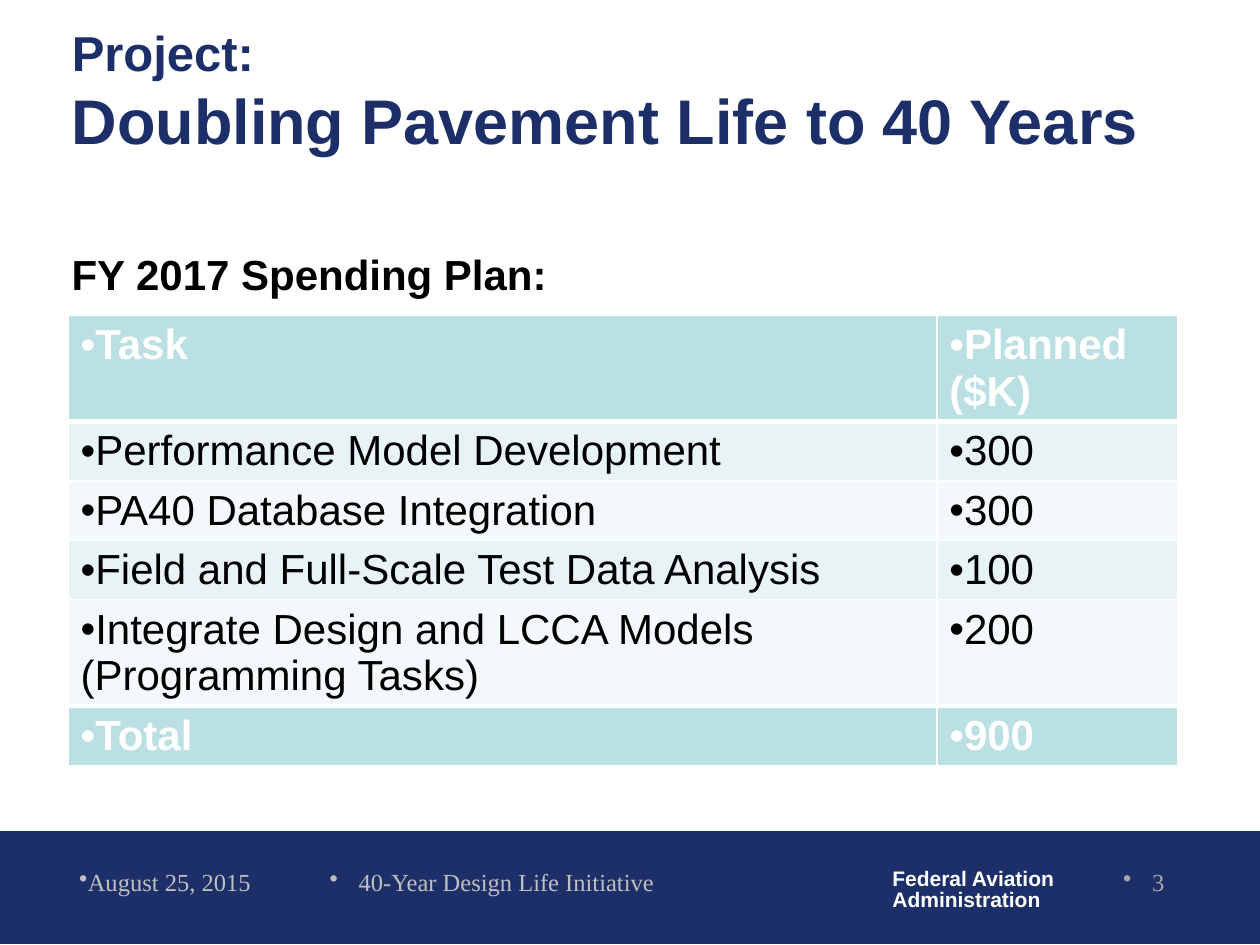
"""Build the FY 2017 spending plan slide of the pavement life project."""
from dataclasses import dataclass
from typing import Optional

from lxml.etree import SubElement
from pptx import Presentation
from pptx.dml.color import RGBColor
from pptx.enum.shapes import MSO_SHAPE as SHAPE
from pptx.enum.text import MSO_ANCHOR as ANCHOR, MSO_AUTO_SIZE as AUTO, PP_ALIGN as ALIGN
from pptx.oxml.ns import qn
from pptx.util import Inches, Pt

COLORS = {
    "navy": "1D2F68", "white": "FFFFFF", "black": "000000", "teal": "BBE0E3",
    "band": "E7F3F4", "pale": "F3F9FA", "silver": "BFBFBF", "gray": "A6A6A6",
}
UNIT = Inches(10) // 100
SANS, SERIF = "Arial", "Times New Roman"


@dataclass
class Box:
    """Place on a grid of 100 columns by 75 rows."""
    col: float
    row: float
    cols: float
    rows: float

    def emu(self) -> tuple:
        return tuple(round(n * UNIT) for n in (self.col, self.row, self.cols, self.rows))


@dataclass
class Style:
    """Character format."""
    size: int
    color: str
    bold: bool = False
    name: str = SANS


@dataclass
class Label:
    """Text box with one paragraph per line; hang is the bullet's indent in columns."""
    box: Box
    lines: list
    style: Style
    align: ALIGN = ALIGN.LEFT
    hang: Optional[float] = None
    wrap: bool = True
    spacing: float = 1.0


HEAD = Style(24, "white", True)
BODY = Style(24, "black")
FOOT = Style(14, "silver", name=SERIF)
TITLE = [("Project: ", Style(28, "navy", True)),
         ("Doubling Pavement Life to 40 Years", Style(36, "navy", True))]
LABELS = [
    Label(Box(69.85, 68.5, 15, 4.4), ["Federal Aviation", "Administration"],
          Style(12, "white", True), wrap=False, spacing=0.85),
    Label(Box(5.3, 68.3, 18.3, 5), ["August 25, 2015"], FOOT, hang=0),
    Label(Box(24, 68.3, 30.1, 5), ["40-Year Design Life Initiative"], FOOT, ALIGN.CENTER, 2.3),
    Label(Box(72.6, 68.3, 20.8, 5), ["3"], Style(14, "gray", name=SERIF), ALIGN.RIGHT, 2.3),
    Label(Box(4.7, 19.25, 87.7, 5), ["FY 2017 Spending Plan:"], Style(24, "black", True)),
]
ROWS = [
    ("Task", "Planned ($K)"),
    ("Performance Model Development", "300"),
    ("PA40 Database Integration", "300"),
    ("Field and Full-Scale Test Data Analysis", "100"),
    ("Integrate Design and LCCA Models (Programming Tasks)", "200"),
    ("Total", "900"),
]
TABLE_BOX = Box(5.4, 25, 88, 24.3)
COLUMNS = (68.95, 19.1)


def rgb(key: str) -> RGBColor:
    return RGBColor.from_string(COLORS[key])


def add_run(p, text: str, style: Style) -> None:
    r = p.add_run()
    r.text = text
    for attr, value in {"size": Pt(style.size), "bold": style.bold, "name": style.name}.items():
        setattr(r.font, attr, value)
    r.font.color.rgb = rgb(style.color)


def add_bullet(p, hang: float = 0, font: Optional[str] = None) -> None:
    pPr = p._p.get_or_add_pPr()
    pPr.set("marL", str(round(hang * UNIT)))
    pPr.set("indent", str(-round(hang * UNIT)))
    if font:
        SubElement(pPr, qn("a:buFont"), typeface=font)
    SubElement(pPr, qn("a:buChar"), char="•")


def add_border(cell, side: str, width: float) -> None:
    ln = SubElement(cell._tc.get_or_add_tcPr(), qn(f"a:ln{side}"), w=str(Pt(width)))
    fill = SubElement(ln, qn("a:solidFill"))
    SubElement(fill, qn("a:srgbClr"), val=COLORS["white"])


def draw_title(s) -> None:
    sp = s.shapes.title
    sp.left, sp.top, sp.width, sp.height = Box(4.7, 3.8, 92.7, 6.7).emu()
    tf = sp.text_frame
    for attr, value in {"auto_size": AUTO.NONE, "word_wrap": True,
                        "vertical_anchor": ANCHOR.MIDDLE}.items():
        setattr(tf, attr, value)
    p = tf.paragraphs[0]
    p.alignment = ALIGN.LEFT
    for i, (text, style) in enumerate(TITLE):
        if i:
            p.add_line_break()
        add_run(p, text, style)


def draw_band(s) -> None:
    sp = s.shapes.add_shape(SHAPE.RECTANGLE, *Box(0, 66, 100, 8.9).emu())
    sp.shadow.inherit = False
    sp.fill.solid()
    sp.fill.fore_color.rgb = sp.line.color.rgb = rgb("navy")
    sp.line.width = Pt(0.75)


def draw_label(s, label: Label) -> None:
    tf = s.shapes.add_textbox(*label.box.emu()).text_frame
    tf.word_wrap = label.wrap
    for i, line in enumerate(label.lines):
        p = tf.add_paragraph() if i else tf.paragraphs[0]
        if label.hang is not None:
            add_bullet(p, label.hang)
        p.alignment = label.align
        p.line_spacing = label.spacing
        add_run(p, line, label.style)


def draw_table(s) -> None:
    table = s.shapes.add_table(len(ROWS), len(COLUMNS), *TABLE_BOX.emu()).table
    for column, width in zip(table.columns, COLUMNS):
        column.width = round(width * UNIT)
    last = len(ROWS) - 1
    for i, row in enumerate(ROWS):
        accent = i in (0, last)
        fill = "teal" if accent else "band" if i % 2 else "pale"
        widths = {"L": 1, "R": 1, "T": 3 if i in (1, last) else 1,
                  "B": 3 if i in (0, last - 1) else 1}
        for j, text in enumerate(row):
            cell = table.cell(i, j)
            for side, width in widths.items():
                add_border(cell, side, width)
            cell.fill.solid()
            cell.fill.fore_color.rgb = rgb(fill)
            p = cell.text_frame.paragraphs[0]
            add_bullet(p, font=SANS)
            add_run(p, text, HEAD if accent else BODY)


def main() -> None:
    prs = Presentation()
    prs.slide_width, prs.slide_height = 100 * UNIT, 75 * UNIT
    s = prs.slides.add_slide(prs.slide_layouts[5])
    draw_band(s)
    draw_title(s)
    draw_table(s)
    for label in LABELS:
        draw_label(s, label)
    prs.save("out.pptx")


if __name__ == "__main__":
    main()
